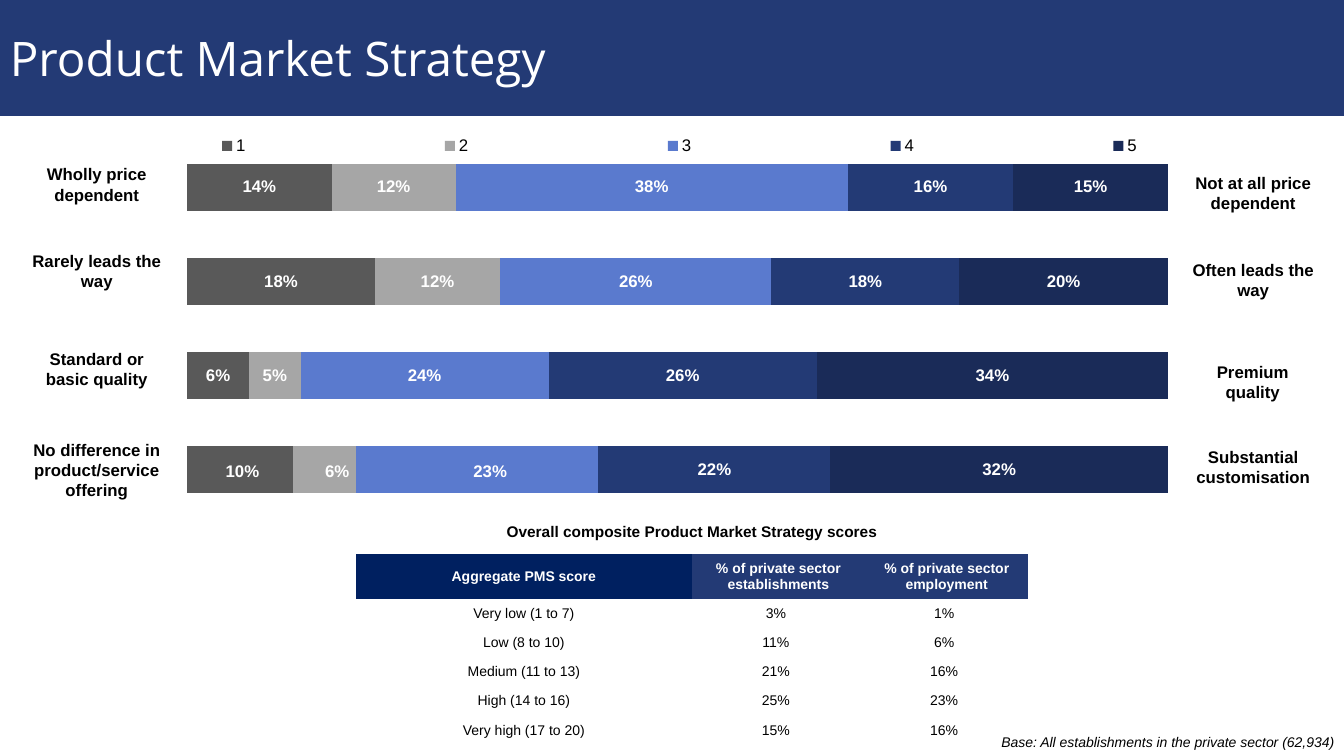
from lxml import etree
from pptx import Presentation
from pptx.chart.data import CategoryChartData
from pptx.dml.color import RGBColor
from pptx.enum.chart import XL_CHART_TYPE as ChartType
from pptx.enum.chart import XL_LABEL_POSITION as LabelPosition
from pptx.enum.chart import XL_LEGEND_POSITION as LegendPosition
from pptx.enum.shapes import MSO_SHAPE as Shape
from pptx.enum.text import MSO_ANCHOR as Anchor
from pptx.enum.text import MSO_AUTO_SIZE as AutoSize
from pptx.enum.text import PP_ALIGN as Align
from pptx.oxml.ns import qn
from pptx.util import Inches, Pt

WHITE = RGBColor(0xFF, 0xFF, 0xFF)
BLACK = RGBColor(0x00, 0x00, 0x00)
NAVY = RGBColor(0x23, 0x3A, 0x75)
HEADER_NAVY = RGBColor(0x00, 0x20, 0x60)
DARK_GREY = RGBColor(0x59, 0x59, 0x59)
LIGHT_GREY = RGBColor(0xA6, 0xA6, 0xA6)
SKY = RGBColor(0x5A, 0x7A, 0xCE)
MIDNIGHT = RGBColor(0x1A, 0x2B, 0x58)
NO_STYLE = "{2D5ABB26-0587-4C30-8999-92F81FD0307C}"

SERIES = [
    ("1", DARK_GREY, (0.10, 0.06, 0.18, 0.14)),
    ("2", LIGHT_GREY, (0.06, 0.05, 0.12, 0.12)),
    ("3", SKY, (0.23, 0.24, 0.26, 0.38)),
    ("4", NAVY, (0.22, 0.26, 0.18, 0.16)),
    ("5", MIDNIGHT, (0.32, 0.34, 0.20, 0.15)),
]
LABEL_SHIFTS = {"1": 0.002, "2": 0.01, "3": 0.01}
SCALE_ENDS = [
    (0.19, 1.58, 1.54, 0.5, "Wholly price dependent"),
    (0.19, 2.44, 1.54, 0.5, "Rarely leads the way"),
    (0.19, 3.41, 1.54, 0.5, "Standard or basic quality"),
    (0.19, 4.31, 1.54, 0.71, "No difference in product/service offering"),
    (11.66, 1.66, 1.54, 0.5, "Not at all price dependent"),
    (11.66, 2.53, 1.54, 0.5, "Often leads the way"),
    (11.78, 3.54, 1.29, 0.5, "Premium quality"),
    (11.66, 4.38, 1.54, 0.5, "Substantial customisation"),
]
SCORES_TITLE = "Overall composite Product Market Strategy scores"
SCORES_HEADER = [
    ("Aggregate PMS score", HEADER_NAVY, 0),
    ("% of private sector establishments", NAVY, 0.05),
    ("% of private sector employment", NAVY, 0.05),
]
SCORES = [
    ("Very low (1 to 7)", "3%", "1%"),
    ("Low (8 to 10)", "11%", "6%"),
    ("Medium (11 to 13)", "21%", "16%"),
    ("High (14 to 16)", "25%", "23%"),
    ("Very high (17 to 20)", "15%", "16%"),
]
COLUMN_WIDTHS = (3.33, 1.67, 1.67)
ROW_HEIGHTS = (0.44, 0.44, 0.29, 0.29, 0.29, 0.29, 0.31)


def apply(target, values):
    for name, value in values.items():
        setattr(target, name, value)


def set_layout(parent, index, values):
    for old in parent.findall(qn("c:layout")):
        parent.remove(old)
    layout = etree.Element(qn("c:layout"))
    manual = etree.SubElement(layout, qn("c:manualLayout"))
    for name, value in values.items():
        etree.SubElement(manual, qn(f"c:{name}")).set("val", str(value))
    parent.insert(index, layout)


class SlideBuilder:
    def __init__(self, slide, font_name):
        self.slide = slide
        self.font_name = font_name

    def style_font(self, font, size, color, **extra):
        apply(font, {"name": self.font_name, "size": Pt(size), **extra})
        font.color.rgb = color

    def add_text(self, frame, text, align, size, color, **extra):
        paragraph = frame.paragraphs[0]
        paragraph.alignment = align
        run = paragraph.add_run()
        run.text = text
        self.style_font(run.font, size, color, **extra)
        return paragraph

    def banner(self, box, text, **style):
        shape = self.slide.shapes.add_shape(Shape.RECTANGLE, *map(Inches, box))
        shape.shadow.inherit = False
        shape.fill.solid()
        shape.fill.fore_color.rgb = NAVY
        shape.line.fill.background()
        shape.text_frame.vertical_anchor = Anchor.MIDDLE
        self.add_text(shape.text_frame, text, Align.LEFT, 34, WHITE, **style)

    def label(self, box, text, align=Align.CENTER, size=12, **style):
        frame = self.slide.shapes.add_textbox(*map(Inches, box)).text_frame
        apply(frame, {"word_wrap": True, "auto_size": AutoSize.SHAPE_TO_FIT_TEXT})
        self.add_text(frame, text, align, size, BLACK, **style)

    def stacked_bars(self, box, categories, series_rows):
        data = CategoryChartData(number_format="0%")
        data.categories = categories
        for name, _, values in series_rows:
            data.add_series(name, values)
        chart = self.slide.shapes.add_chart(
            ChartType.BAR_STACKED_100, *map(Inches, box), data).chart
        apply(chart, {"has_title": False, "has_legend": True})
        self.style_font(chart.font, 18, BLACK, name="Open Sans")
        apply(chart.legend, {"position": LegendPosition.TOP, "include_in_layout": False})
        self.style_font(chart.legend.font, 12, BLACK)
        for axis in (chart.category_axis, chart.value_axis):
            apply(axis, {"visible": False, "has_major_gridlines": False})
        apply(chart.value_axis, {"minimum_scale": 0, "maximum_scale": 1})
        plot = chart.plots[0]
        apply(plot, {"gap_width": 100, "overlap": 100, "vary_by_categories": False})
        for series, (name, color, _) in zip(plot.series, series_rows):
            series.format.fill.solid()
            series.format.fill.fore_color.rgb = color
            labels = series.data_labels
            apply(labels, {"show_value": True, "position": LabelPosition.CENTER,
                           "number_format": "0%", "number_format_is_linked": False})
            self.style_font(labels.font, 12, WHITE, bold=True)
            if name in LABEL_SHIFTS:
                point_label = series.points[0].data_label
                point_label.position = LabelPosition.CENTER
                self.style_font(point_label.font, 12, WHITE, bold=True)
                element = labels._element.find(qn("c:dLbl"))
                set_layout(element, 1, {"x": LABEL_SHIFTS[name], "y": 0.004})
        edges = {"xMode": "edge", "yMode": "edge"}
        plot_area = chart._chartSpace.chart.plotArea
        set_layout(plot_area, 0, {"layoutTarget": "inner", **edges,
                                  "x": 0.122, "y": 0.047, "w": 0.753, "h": 0.838})
        set_layout(chart.legend._element, 1,
                   {**edges, "x": 0, "y": 0.03, "w": 1, "h": 0.06})

    def cell(self, cell, text, size, color, bold, fill=None, indent=(0, 0), before=0, after=0):
        apply(cell, {"vertical_anchor": Anchor.MIDDLE,
                     "margin_left": Inches(0.07), "margin_right": Inches(0.07),
                     "margin_top": 0, "margin_bottom": 0})
        if fill is None:
            cell.fill.background()
        else:
            cell.fill.solid()
            cell.fill.fore_color.rgb = fill
        paragraph = self.add_text(cell.text_frame, text, Align.CENTER, size, color, bold=bold)
        apply(paragraph, {"space_before": Pt(before), "space_after": Pt(after)})
        properties = paragraph._p.get_or_add_pPr()
        for name, value in zip(("marL", "indent"), indent):
            properties.set(name, str(Inches(value)))

    def scores_table(self, box):
        frame = self.slide.shapes.add_table(
            len(ROW_HEIGHTS), len(COLUMN_WIDTHS), *map(Inches, box))
        table = frame.table
        apply(table, {"first_row": False, "horz_banding": False})
        table._tbl.tblPr.find(qn("a:tableStyleId")).text = NO_STYLE
        for column, width in zip(table.columns, COLUMN_WIDTHS):
            column.width = Inches(width)
        for row, height in zip(table.rows, ROW_HEIGHTS):
            row.height = Inches(height)
        table.cell(0, 0).merge(table.cell(0, 2))
        self.cell(table.cell(0, 0), SCORES_TITLE, 11, BLACK, True, before=6, after=6)
        for column, (text, fill, indent) in enumerate(SCORES_HEADER):
            self.cell(table.cell(1, column), text, 10, WHITE, True, fill,
                      (indent, 0), before=6, after=6)
        for row, texts in enumerate(SCORES, 2):
            for column, text in enumerate(texts):
                self.cell(table.cell(row, column), text, 10, BLACK, False,
                          indent=(0.3, -0.3), before=6 if row == 2 else 0)


def main():
    presentation = Presentation()
    apply(presentation, {"slide_width": Inches(13.33), "slide_height": Inches(7.5)})
    slide = presentation.slides.add_slide(presentation.slide_layouts[6])
    builder = SlideBuilder(slide, "Arial")
    builder.banner((0, 0, 13.33, 1.15), "Product Market Strategy", name="Open Sans")
    builder.stacked_bars((0.28, 1.18, 12.92, 4.46), ("1", "2", "3", "4"), SERIES)
    for *box, text in SCALE_ENDS:
        builder.label(box, text, bold=True)
    builder.label((4.59, 7.23, 8.74, 0.27),
                  "Base: All establishments in the private sector (62,934)",
                  Align.RIGHT, 10, italic=True)
    builder.scores_table((3.53, 5.06, 6.67, 2.35))
    presentation.save("out.pptx")


if __name__ == "__main__":
    main()
